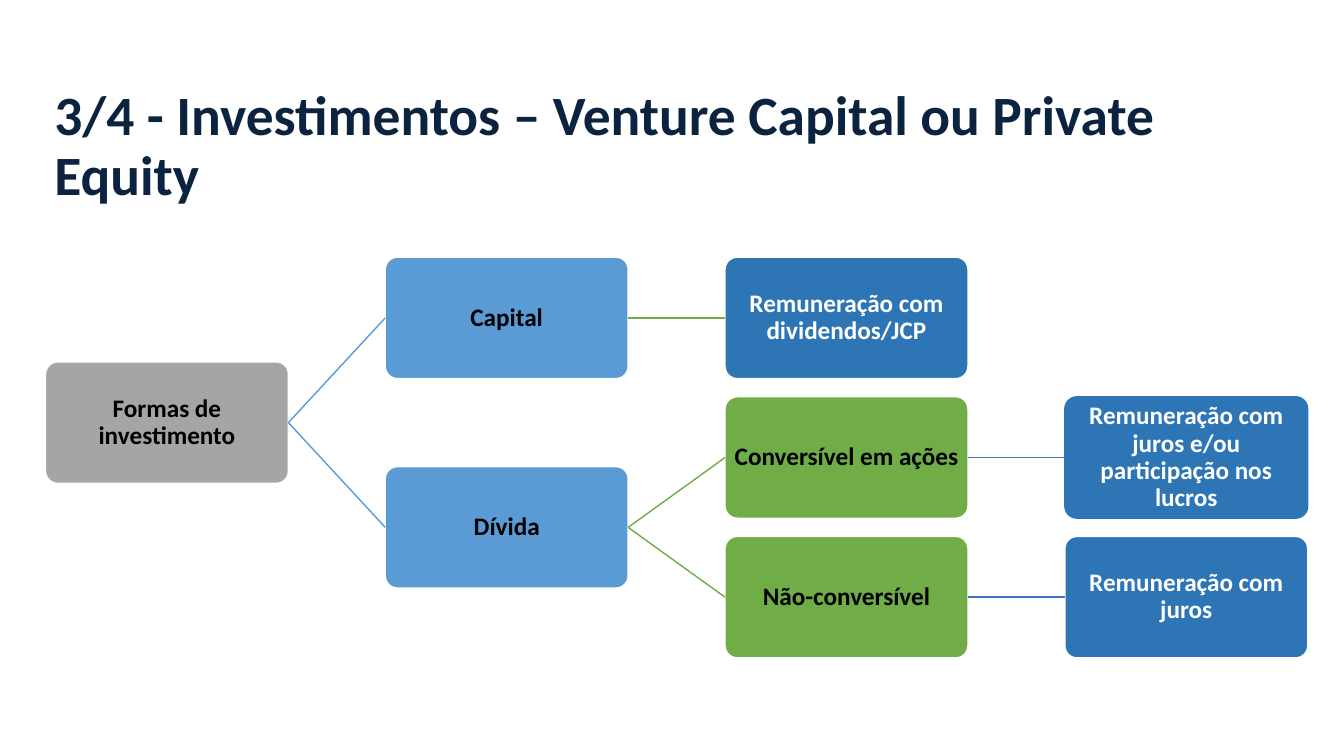
from dataclasses import dataclass

from lxml import etree
from pptx import Presentation
from pptx.dml.color import RGBColor
from pptx.enum import shapes, text
from pptx.oxml.ns import qn
from pptx.util import Pt


@dataclass(frozen=True)
class Theme:
    font: str = "Calibri"
    title_size: float = 39.6
    node_size: float = 18
    navy: str = "0B233F"
    black: str = "000000"
    white: str = "FFFFFF"
    gray: str = "A5A5A5"
    light_blue: str = "5B9BD5"
    dark_blue: str = "2E75B6"
    green: str = "70AD47"
    indigo: str = "4472C4"


THEME = Theme()

LEFT, TOP = 32.5, 183.7
COLUMN_STEP, ROW_STEP = 242.7, 99.75
NODE_W, NODE_H = 173.5, 86.75

# key: (column, row, label, fill, text colour, outline)
NODES = {
    "root": (0, 0.75, "Formas de investimento", THEME.gray, THEME.black, THEME.white),
    "equity": (1, 0, "Capital", THEME.light_blue, THEME.black, THEME.white),
    "debt": (1, 1.5, "Dívida", THEME.light_blue, THEME.black, THEME.white),
    "dividends": (2, 0, "Remuneração com dividendos/JCP",
                  THEME.dark_blue, THEME.white, THEME.white),
    "convertible": (2, 1, "Conversível em ações", THEME.green, THEME.black, THEME.white),
    "straight": (2, 2, "Não-conversível", THEME.green, THEME.black, THEME.white),
    "profit_share": (3, 1, "Remuneração com juros e/ou participação nos lucros",
                     THEME.dark_blue, THEME.white, THEME.dark_blue),
    "interest": (3, 2, "Remuneração com juros",
                 THEME.dark_blue, THEME.white, THEME.white),
}

BRANCHES = [
    ("root", "equity", THEME.light_blue),
    ("root", "debt", THEME.light_blue),
    ("equity", "dividends", THEME.green),
    ("debt", "convertible", THEME.green),
    ("debt", "straight", THEME.green),
    ("convertible", "profit_share", THEME.indigo),
    ("straight", "interest", THEME.indigo),
]


def rgb(color):
    return RGBColor.from_string(color)


def write(tf, content, size, color, align):
    tf.word_wrap = True
    tf.auto_size = text.MSO_AUTO_SIZE.NONE
    tf.vertical_anchor = text.MSO_ANCHOR.MIDDLE
    p = tf.paragraphs[0]
    p.alignment = align
    p.line_spacing = 0.9
    r = p.add_run()
    r.text = content
    r.font.name = THEME.font
    r.font.size = Pt(size)
    r.font.bold = True
    r.font.color.rgb = rgb(color)


def add_title(s, content):
    sp = s.shapes.title
    sp.left, sp.top, sp.width, sp.height = Pt(31.7), Pt(67), Pt(902), Pt(77)
    write(sp.text_frame, content, THEME.title_size, THEME.navy, text.PP_ALIGN.LEFT)


def add_node(s, column, row, label, fill, color, outline):
    sp = s.shapes.add_shape(
        shapes.MSO_SHAPE.ROUNDED_RECTANGLE,
        Pt(LEFT + column * COLUMN_STEP), Pt(TOP + row * ROW_STEP),
        Pt(NODE_W), Pt(NODE_H))
    sp.adjustments[0] = 0.1
    sp.shadow.inherit = False
    sp.fill.solid()
    sp.fill.fore_color.rgb = rgb(fill)
    sp.line.color.rgb = rgb(outline)
    sp.line.width = Pt(1)
    tf = sp.text_frame
    tf.margin_left = tf.margin_right = tf.margin_top = tf.margin_bottom = Pt(0.8)
    write(tf, label, THEME.node_size, color, text.PP_ALIGN.CENTER)
    return sp


def add_branch(s, parent, child, color):
    """Join the right side of parent to the left side of child."""
    line = s.shapes.add_connector(shapes.MSO_CONNECTOR.STRAIGHT, 0, 0, 0, 0)
    line.begin_connect(parent, 3)
    line.end_connect(child, 1)
    line.line.color.rgb = rgb(color)
    line.line.width = Pt(1)
    etree.SubElement(line._element.spPr, qn("a:effectLst"))


def main():
    prs = Presentation()
    prs.slide_width, prs.slide_height = Pt(960), Pt(540)
    s = prs.slides.add_slide(prs.slide_layouts[5])
    add_title(s, "3/4 - Investimentos – Venture Capital ou Private Equity")
    nodes = {key: add_node(s, *node) for key, node in NODES.items()}
    for parent, child, color in BRANCHES:
        add_branch(s, nodes[parent], nodes[child], color)
    prs.save("out.pptx")


if __name__ == "__main__":
    main()
